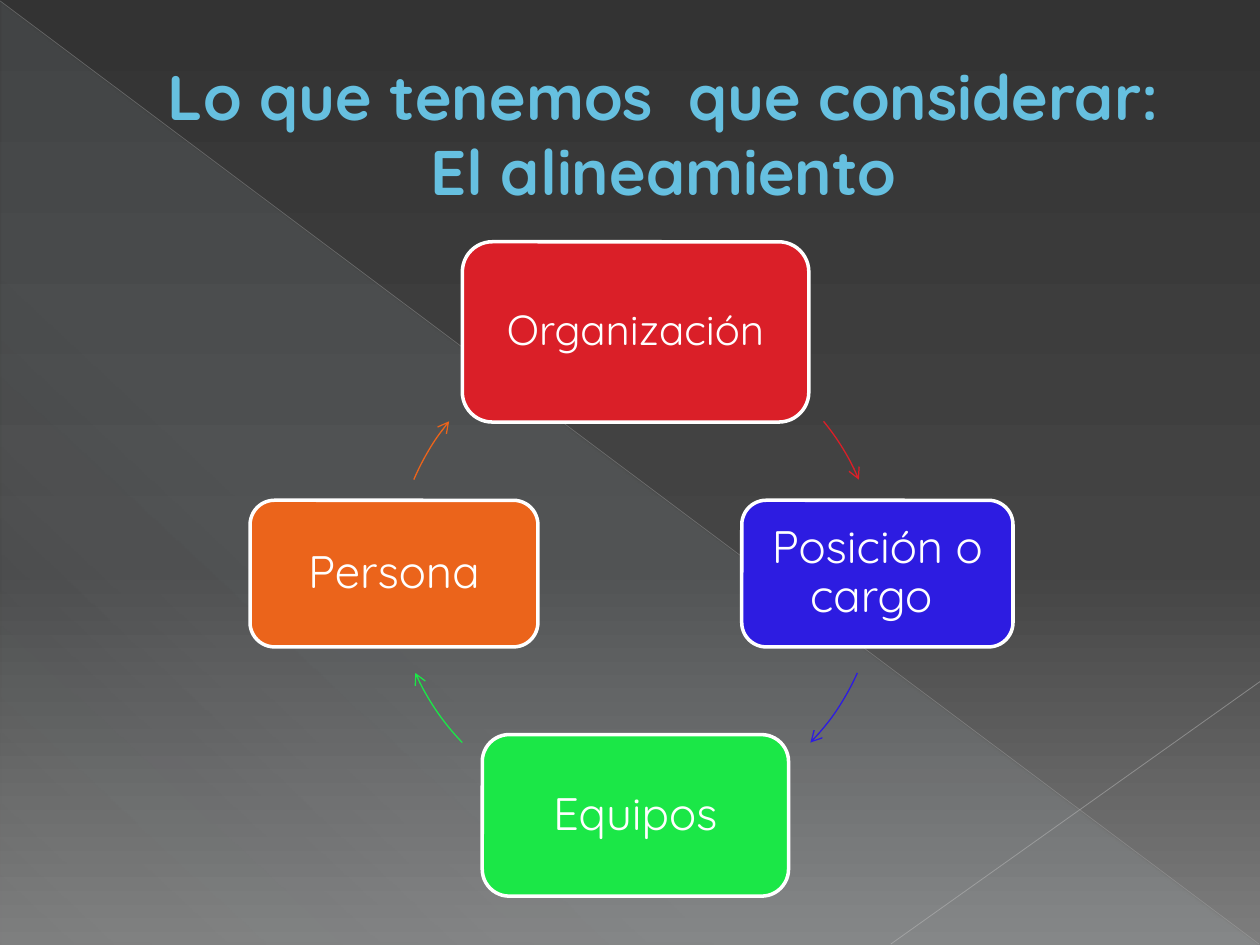
from pptx import Presentation
from pptx import util as u
from pptx.dml.color import RGBColor
from pptx.enum import shapes, text
from pptx.oxml import parse_xml
from pptx.oxml.ns import nsdecls, qn

COLORS = {
    "title": "66C0E0", "white": "FFFFFF", "glow": "DEF5FA",
    "diagonal": "B9B9B9", "corner": "C1C1C1",
    "bg_top": "333333", "bg_mid": "444444", "bg_end": "7D7D7D",
    "red": "DA1F28", "blue": "2D1CE1", "green": "1BE747", "orange": "EB641B",
}


def rgb(name):
    return RGBColor.from_string(COLORS[name])


def set_values(obj, values):
    for name, value in values.items():
        setattr(obj, name, value)


def a_xml(tag, attrs="", inner=""):
    return parse_xml(f"<a:{tag} {nsdecls('a')} {attrs}>{inner}</a:{tag}>")


class Deck:
    font = "Quicksand"
    frame = {"word_wrap": True, "auto_size": text.MSO_AUTO_SIZE.NONE,
             "vertical_anchor": text.MSO_ANCHOR.MIDDLE}

    def __init__(self, slide):
        self.s = slide

    def gradient(self, fill, parent, stops, angle):
        """Fill with stops of (position %, colour, opacity %)."""
        fill.gradient()
        gs = "".join(
            f'<a:gs pos="{pos * 1000}"><a:srgbClr val="{COLORS[c]}">'
            f'<a:alpha val="{alpha * 1000}"/></a:srgbClr></a:gs>'
            for pos, c, alpha in stops)
        inner = f'<a:gsLst>{gs}</a:gsLst><a:lin ang="{angle * 60000}" scaled="0"/>'
        parent.replace(parent.find(qn("a:gradFill")), a_xml("gradFill", "", inner))

    def shape(self, kind, box):
        sp = self.s.shapes.add_shape(kind, *map(u.Pt, box))
        sp.shadow.inherit = False
        return sp

    def outline(self, line, color, width):
        line.color.rgb = rgb(color)
        line.width = u.Pt(width)

    def label(self, tf, words, size, color, bold, margins):
        set_values(tf, self.frame)
        set_values(tf, {f"margin_{side}": u.Pt(m) for side, m in margins.items()})
        tf.text = words
        p = tf.paragraphs[0]
        p.alignment = text.PP_ALIGN.CENTER
        for r in p.runs:
            set_values(r.font, {"name": self.font, "size": u.Pt(size), "bold": bold})
            r.font.color.rgb = rgb(color)
        return p

    def title(self, words, box):
        sp = self.s.shapes.title
        set_values(sp, dict(zip(("left", "top", "width", "height"), map(u.Pt, box))))
        # Bring the title in front of the backdrop
        sp.element.getparent().append(sp.element)
        self.label(sp.text_frame, words, 36, "title", True, {"left": 45.4})

    def hairline(self, start, end, color, width, opacity):
        line = self.s.shapes.add_connector(
            shapes.MSO_CONNECTOR.STRAIGHT, *map(u.Pt, start + end))
        self.outline(line.line, color, width)
        pr = line.element.spPr
        pr.find(".//" + qn("a:srgbClr")).append(
            a_xml("alpha", f'val="{opacity * 1000}"'))
        pr.append(a_xml("effectLst"))

    def card(self, words, box, color, size):
        sp = self.shape(shapes.MSO_SHAPE.ROUNDED_RECTANGLE, box)
        sp.fill.solid()
        sp.fill.fore_color.rgb = rgb(color)
        self.outline(sp.line, "white", 2)
        inset = dict.fromkeys(("left", "top", "right", "bottom"), size * 0.3)
        p = self.label(sp.text_frame, words, size, "white", False, inset)
        p.line_spacing = 0.9

    def arc_arrow(self, ring, start, end, color):
        """Arrow along the ring; angles in degrees, clockwise from the right."""
        sp = self.shape(shapes.MSO_SHAPE.ARC, ring)
        # Arc adjustments are 60000ths of a degree over 100000
        sp.adjustments[0], sp.adjustments[1] = start * 0.6, end * 0.6
        sp.fill.background()
        self.outline(sp.line, color, 0.75)
        sp.element.spPr.find(qn("a:ln")).append(a_xml("tailEnd", 'type="arrow"'))


def main():
    prs = Presentation()
    prs.slide_width, prs.slide_height = u.Pt(720), u.Pt(540)
    s = prs.slides.add_slide(prs.slide_layouts[5])
    deck = Deck(s)

    # Backdrop
    fill = s.background.fill
    fill.solid()
    deck.gradient(fill, s.element.find(".//" + qn("p:bgPr")),
                  [(0, "bg_top", 100), (60, "bg_mid", 100), (100, "bg_end", 100)], 90)
    sp = deck.shape(shapes.MSO_SHAPE.RIGHT_TRIANGLE, (0.5, 1.2, 718.8, 538.5))
    deck.gradient(sp.fill, sp.element.spPr,
                  [(0, "glow", 10), (70, "glow", 8), (100, "glow", 1)], 133)
    sp.line.fill.background()
    deck.hairline((0, 0.5), (719.5, 539.5), "diagonal", 0.39, 35)
    deck.hairline((720, 389.5), (509, 539.5), "corner", 0.47, 45)

    # Title
    deck.title("Lo que tenemos  que considerar:\vEl alineamiento", (36, 21, 648, 110))

    # Cycle: each card is followed by the arrow leading to the next one
    ring = (225.4, 190.1, 276.5, 276.5)
    steps = [
        ("Organización", (264.2, 138.2, 198, 103), "red", 24, 320.7, 336.9),
        ("Posición o cargo ", (423.9, 285.9, 155, 83.8), "blue", 26, 24, 44),
        ("Equipos", (275.6, 419.8, 175, 92.3), "green", 26, 136, 156),
        ("Persona", (142.9, 285.9, 164.5, 83.8), "orange", 26, 203.1, 219.3),
    ]
    for words, box, color, size, start, end in steps:
        deck.card(words, box, color, size)
        deck.arc_arrow(ring, start, end, color)

    prs.save("out.pptx")


if __name__ == "__main__":
    main()
